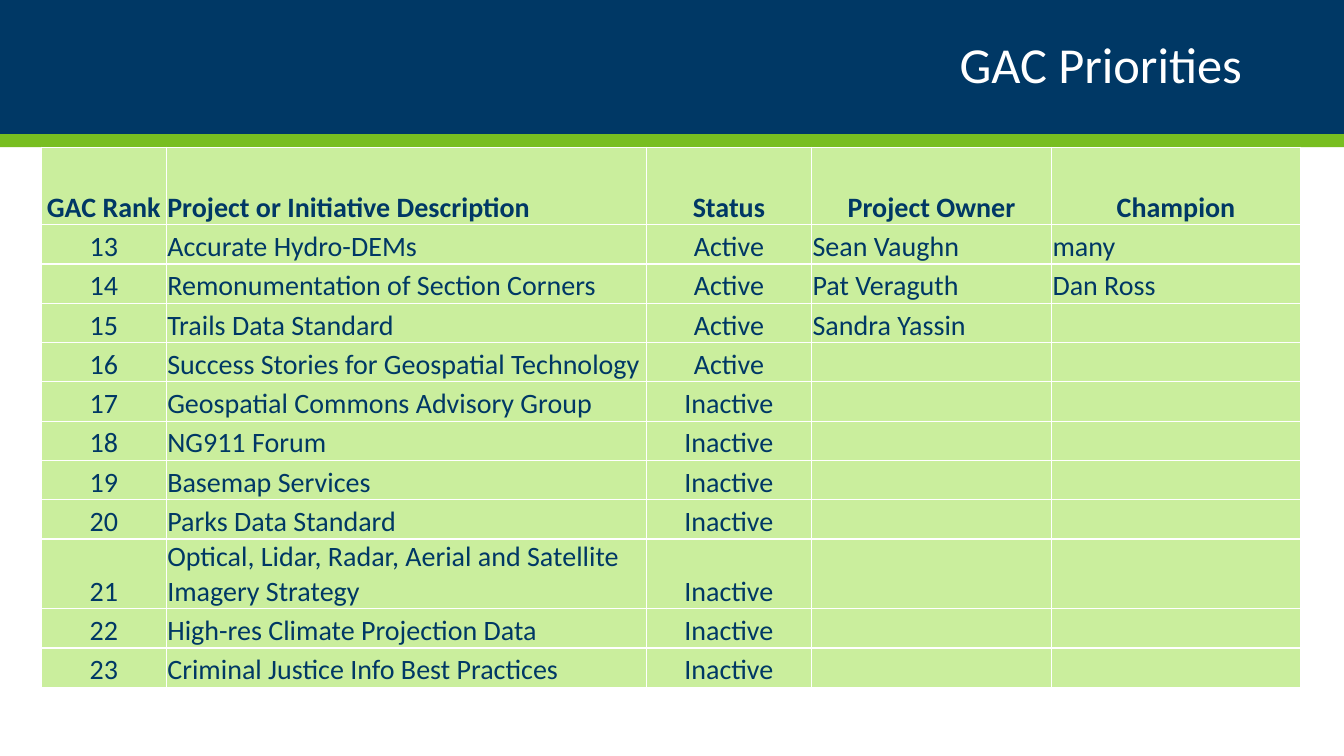
"""Build the GAC Priorities slide with its table of ranked projects."""
from lxml.etree import SubElement
from pptx import Presentation
from pptx.dml.color import RGBColor
from pptx.enum.shapes import MSO_SHAPE
from pptx.enum.text import MSO_ANCHOR, PP_ALIGN
from pptx.oxml.ns import qn
from pptx.util import Inches, Pt

NAVY = RGBColor(0x00, 0x38, 0x65)
GREEN = RGBColor(0x78, 0xBE, 0x21)
PALE_GREEN = RGBColor(0xCA, 0xEE, 0x9D)
WHITE = RGBColor(0xFF, 0xFF, 0xFF)
FONT = "Calibri"

COLUMN_WIDTHS = [1.24, 4.76, 1.64, 2.38, 2.47]
HEADER_HEIGHT = 0.77
ROW_HEIGHT = 0.39
HEADER = ["GAC Rank", "Project or Initiative Description", "Status", "Project Owner", "Champion"]
FIRST_RANK = 13
PROJECTS = [
    ("Accurate Hydro-DEMs", "Active", "Sean Vaughn", "many"),
    ("Remonumentation of Section Corners", "Active", "Pat Veraguth", "Dan Ross"),
    ("Trails Data Standard", "Active", "Sandra Yassin", ""),
    ("Success Stories for Geospatial Technology", "Active", "", ""),
    ("Geospatial Commons Advisory Group", "Inactive", "", ""),
    ("NG911 Forum", "Inactive", "", ""),
    ("Basemap Services", "Inactive", "", ""),
    ("Parks Data Standard", "Inactive", "", ""),
    ("Optical, Lidar, Radar, Aerial and Satellite Imagery Strategy", "Inactive", "", ""),
    ("High-res Climate Projection Data", "Inactive", "", ""),
    ("Criminal Justice Info Best Practices", "Inactive", "", ""),
]


def add_borders(cell, color, width):
    properties = cell._tc.get_or_add_tcPr()
    for side in ("a:lnL", "a:lnR", "a:lnT", "a:lnB"):
        line = SubElement(properties, qn(side), w=str(width))
        fill = SubElement(line, qn("a:solidFill"))
        SubElement(fill, qn("a:srgbClr"), val=str(color))


def set_font(paragraph, size, color, bold):
    paragraph.font.name = FONT
    paragraph.font.size = Pt(size)
    paragraph.font.bold = bold
    paragraph.font.color.rgb = color


presentation = Presentation()
presentation.slide_width = Inches(13.33)
presentation.slide_height = Inches(7.5)
slide = presentation.slides.add_slide(presentation.slide_layouts[5])

title = slide.shapes.title
title.left, title.top = Inches(0.92), Inches(0.17)
title.width, title.height = Inches(11.5), Inches(1)
title.text_frame.text = "GAC Priorities"
title.text_frame.vertical_anchor = MSO_ANCHOR.MIDDLE
heading = title.text_frame.paragraphs[0]
heading.alignment = PP_ALIGN.RIGHT
heading.line_spacing = 0.9
set_font(heading, 36, WHITE, False)

for top, height, color in ((0, 1.33, NAVY), (1.33, 0.13, GREEN)):
    band = slide.shapes.add_shape(
        MSO_SHAPE.RECTANGLE, 0, Inches(top), presentation.slide_width, Inches(height))
    band.shadow.inherit = False
    band.fill.solid()
    band.fill.fore_color.rgb = color
    band.line.fill.background()
    title.element.addprevious(band.element)

rows = [HEADER] + [(str(rank), *project) for rank, project in enumerate(PROJECTS, FIRST_RANK)]
table = slide.shapes.add_table(
    len(rows), len(HEADER), Inches(0.41), Inches(1.46), Inches(sum(COLUMN_WIDTHS)),
    Inches(HEADER_HEIGHT + ROW_HEIGHT * len(PROJECTS))).table
for column, width in zip(table.columns, COLUMN_WIDTHS):
    column.width = Inches(width)

for row_index, values in enumerate(rows):
    is_header = row_index == 0
    table.rows[row_index].height = Inches(HEADER_HEIGHT if is_header else ROW_HEIGHT)
    for column_index, value in enumerate(values):
        cell = table.cell(row_index, column_index)
        add_borders(cell, WHITE, Pt(1))
        cell.fill.solid()
        cell.fill.fore_color.rgb = PALE_GREEN
        cell.margin_left = cell.margin_right = cell.margin_top = Inches(0.01)
        cell.margin_bottom = 0
        cell.vertical_anchor = MSO_ANCHOR.BOTTOM
        cell.text = value
        paragraph = cell.text_frame.paragraphs[0]
        centered = column_index in (0, 2) or (is_header and column_index > 2)
        paragraph.alignment = PP_ALIGN.CENTER if centered else PP_ALIGN.LEFT
        set_font(paragraph, 20, NAVY, is_header)

presentation.save("out.pptx")
